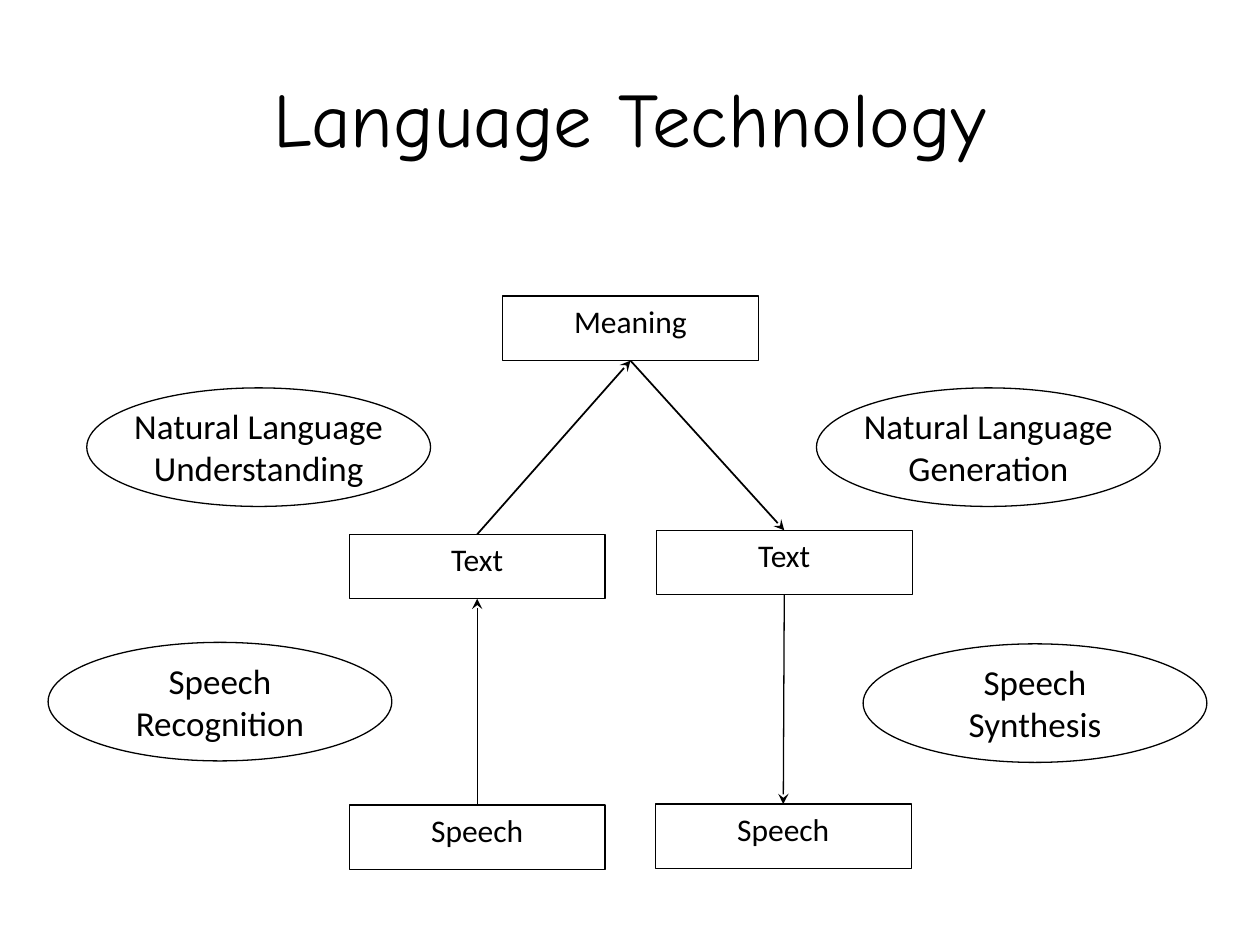
from dataclasses import dataclass

import pptx
import pptx.dml.color
import pptx.enum.shapes
import pptx.enum.text
import pptx.oxml.ns
import pptx.oxml.xmlchemy
import pptx.util
import lxml.etree
from pptx.util import Cm

BLACK = "000000"
BOX_WIDTH, BOX_HEIGHT = 5.16, 1.3
OVAL_WIDTH, OVAL_HEIGHT = 6.93, 2.39
LABEL_HEIGHT = 1.96
TOP, BOTTOM = 0, 2


@dataclass
class Stage:
    name: str
    text: str
    left: float
    top: float


@dataclass
class Process:
    text: str
    left: float
    top: float
    label_width: float


@dataclass
class Arrow:
    source: str
    source_side: int
    target: str
    target_side: int
    weight: float


STAGES = [
    Stage("meaning", "Meaning", 10.13, 5.97),
    Stage("input text", "Text", 7.04, 10.77),
    Stage("output text", "Text", 13.23, 10.69),
    Stage("input speech", "Speech", 7.04, 16.23),
    Stage("output speech", "Speech", 13.21, 16.21),
]
PROCESSES = [
    Process("Natural Language Understanding", 1.75, 7.82, 6.6),
    Process("Natural Language Generation", 16.46, 7.82, 6.6),
    Process("Speech Recognition", 0.97, 12.95, 5.38),
    Process("Speech Synthesis", 17.4, 12.98, 5.38),
]
ARROWS = [
    Arrow("input speech", TOP, "input text", BOTTOM, 0.75),
    Arrow("input text", TOP, "meaning", BOTTOM, 1),
    Arrow("meaning", BOTTOM, "output text", TOP, 1),
    Arrow("output text", BOTTOM, "output speech", TOP, 0.75),
]


def color(value: str) -> pptx.dml.color.RGBColor:
    return pptx.dml.color.RGBColor.from_string(value)


def write(shape, text: str, *, size: float, font: str = "Calibri", middle: bool = False) -> None:
    frame = shape.text_frame
    frame.word_wrap = True
    anchors = pptx.enum.text.MSO_ANCHOR
    frame.vertical_anchor = anchors.MIDDLE if middle else anchors.TOP
    para = frame.paragraphs[0]
    para.alignment = pptx.enum.text.PP_ALIGN.CENTER
    span = para.add_run()
    span.text = text
    span.font.name = font
    span.font.size = pptx.util.Pt(size)
    span.font.color.rgb = color(BLACK)


def draw_outline(shapes, kind, left: float, top: float, width: float, height: float):
    shape = shapes.add_shape(kind, Cm(left), Cm(top), Cm(width), Cm(height))
    shape.shadow.inherit = False
    shape.fill.background()
    shape.line.color.rgb = color(BLACK)
    shape.line.width = pptx.util.Pt(0.75)
    return shape


def draw_stage(page, stage: Stage):
    kind = pptx.enum.shapes.MSO_SHAPE.RECTANGLE
    box = draw_outline(page.shapes, kind, stage.left, stage.top, BOX_WIDTH, BOX_HEIGHT)
    write(box, stage.text, size=18)
    return box


def draw_process(page, process: Process) -> None:
    group = page.shapes.add_group_shape()
    kind = pptx.enum.shapes.MSO_SHAPE.OVAL
    draw_outline(group.shapes, kind, process.left, process.top, OVAL_WIDTH, OVAL_HEIGHT)
    label = group.shapes.add_textbox(
        Cm(process.left + (OVAL_WIDTH - process.label_width) / 2),
        Cm(process.top + (OVAL_HEIGHT - LABEL_HEIGHT) / 2),
        Cm(process.label_width),
        Cm(LABEL_HEIGHT),
    )
    write(label, process.text, size=20)


def draw_arrow(page, arrow: Arrow, boxes: dict) -> None:
    straight = pptx.enum.shapes.MSO_CONNECTOR.STRAIGHT
    connector = page.shapes.add_connector(straight, 0, 0, 0, 0)
    connector.begin_connect(boxes[arrow.source], arrow.source_side)
    connector.end_connect(boxes[arrow.target], arrow.target_side)
    connector.line.color.rgb = color(BLACK)
    connector.line.width = pptx.util.Pt(arrow.weight)
    qualify = pptx.oxml.ns.qn
    properties = connector._element.spPr
    line = properties.find(qualify("a:ln"))
    lxml.etree.SubElement(line, qualify("a:tailEnd"), type="stealth")
    lxml.etree.SubElement(properties, qualify("a:effectLst"))


def main() -> None:
    deck = pptx.Presentation()
    deck.slide_width, deck.slide_height = Cm(25.4), Cm(19.05)
    page = deck.slides.add_slide(deck.slide_layouts[6])
    title = page.shapes.add_textbox(Cm(1.27), Cm(0.76), Cm(22.86), Cm(3.18))
    write(title, "Language Technology", size=44, font="Comic Neue", middle=True)
    for process in PROCESSES:
        draw_process(page, process)
    boxes = {stage.name: draw_stage(page, stage) for stage in STAGES}
    for arrow in ARROWS:
        draw_arrow(page, arrow, boxes)
    deck.save("out.pptx")


if __name__ == "__main__":
    main()
